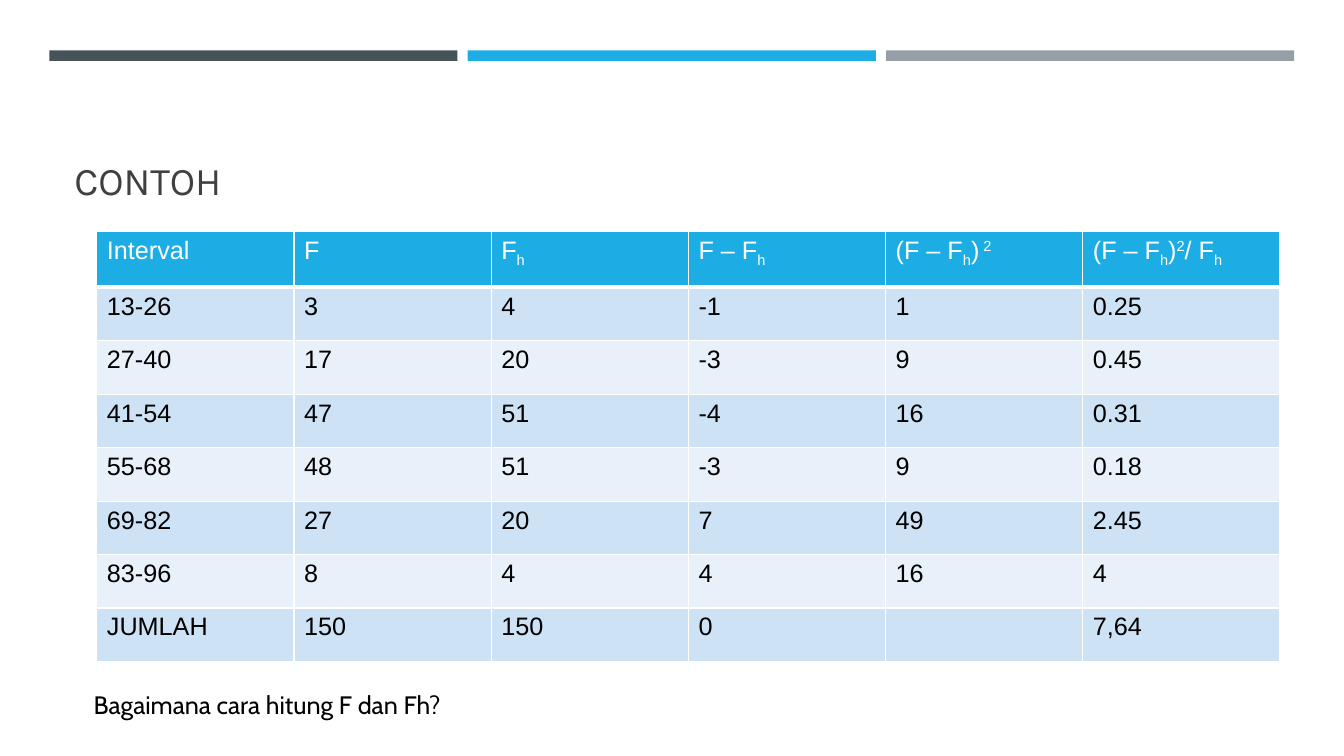
import pptx
import pptx.util
import pptx.dml.color
import pptx.enum.shapes
import pptx.enum.text
from lxml import etree

Pt = pptx.util.Pt
HUES = {
    "slate": "465359", "blue": "1CADE4", "gray": "969FA7",
    "title": "404040", "black": "000000", "white": "FFFFFF",
    "odd": "CDE3F5", "even": "E8F1FA",
}
SUB, SUP = -25000, 30000
HEAD = [
    ["Interval"],
    ["F"],
    ["F", ("h", SUB)],
    ["F – F", ("h", SUB)],
    ["(F – F", ("h", SUB), ")", (" 2", SUP)],
    ["(F – F", ("h", SUB), ")", ("2", SUP), "/ F", ("h", SUB)],
]
ROWS = [
    ["13-26", "3", "4", "-1", "1", "0.25"],
    ["27-40", "17", "20", "-3", "9", "0.45"],
    ["41-54", "47", "51", "-4", "16", "0.31"],
    ["55-68", "48", "51", "-3", "9", "0.18"],
    ["69-82", "27", "20", "7", "49", "2.45"],
    ["83-96", "8", "4", "4", "16", "4"],
    ["JUMLAH", "150", "150", "0", "", "7,64"],
]
TITLE = {"name": "Karla", "size": Pt(28), "hue": "title"}
NOTE = {"name": "Cabin", "size": Pt(18), "hue": "black"}
BODY = {"name": "Arial", "size": Pt(18), "bold": False, "hue": "black"}
TOP = {**BODY, "hue": "white"}


def color(key):
    return pptx.dml.color.RGBColor.from_string(HUES[key])


def style(font, form):
    for key, value in form.items():
        if key == "hue":
            font.color.rgb = color(value)
        else:
            setattr(font, key, value)


def write(frame, parts, form):
    """Fill the first paragraph; a (text, shift) part is raised or lowered."""
    para = frame.paragraphs[0]
    for part in parts:
        text, shift = (part, 0) if isinstance(part, str) else part
        run = para.add_run()
        run.text = text
        style(run.font, form)
        if shift:
            run._r.get_or_add_rPr().set("baseline", str(shift))


def label(slide, box, text, form, anchor):
    frame = slide.shapes.add_textbox(*map(Pt, box)).text_frame
    frame.word_wrap = True
    frame.vertical_anchor = anchor
    write(frame, [text], form)


def bars(slide, box, gap):
    left, top, width, height = box
    keys = ["slate", "blue", "gray"]
    span = (width - gap * (len(keys) - 1)) / len(keys)
    for i, key in enumerate(keys):
        bar = slide.shapes.add_shape(
            pptx.enum.shapes.MSO_SHAPE.RECTANGLE,
            Pt(left + i * (span + gap)), Pt(top), Pt(span), Pt(height))
        bar.shadow.inherit = False
        bar.fill.solid()
        bar.fill.fore_color.rgb = color(key)
        bar.line.fill.background()


def edge(cell, widths):
    """Draw white cell borders, placed ahead of the fill as the schema asks."""
    props = cell._tc.get_or_add_tcPr()
    tag = "{http://schemas.openxmlformats.org/drawingml/2006/main}"
    for i, (side, width) in enumerate(widths.items()):
        line = etree.Element(f"{tag}ln{side}", w=str(Pt(width)))
        fill = etree.SubElement(line, f"{tag}solidFill")
        etree.SubElement(fill, f"{tag}srgbClr", val=HUES["white"])
        props.insert(i, line)


def grid(slide, box, first):
    left, top, width, height = box
    count = len(ROWS) + 1
    table = slide.shapes.add_table(count, len(HEAD), *map(Pt, box)).table
    for col in table.columns:
        col.width = Pt(width / len(HEAD))
    for i, row in enumerate(table.rows):
        row.height = Pt((height - first) / len(ROWS) if i else first)
        for j, cell in enumerate(row.cells):
            cell.fill.solid()
            key = ("odd" if i % 2 else "even") if i else "blue"
            cell.fill.fore_color.rgb = color(key)
            if i == 0:
                write(cell.text_frame, HEAD[j], TOP)
                edge(cell, {"L": 1, "R": 1, "T": 1, "B": 3})
            elif ROWS[i - 1][j]:
                write(cell.text_frame, [ROWS[i - 1][j]], BODY)
            else:
                style(cell.text_frame.paragraphs[0].font, BODY)


def main():
    deck = pptx.Presentation()
    deck.slide_width, deck.slide_height = Pt(960), Pt(540)
    slide = deck.slides.add_slide(deck.slide_layouts[6])
    anchor = pptx.enum.text.MSO_ANCHOR
    bars(slide, (35.2, 36, 889.3, 7.5), 7.4)
    label(slide, (46, 55.4, 868.4, 93.6), "CONTOH", TITLE, anchor.BOTTOM)
    grid(slide, (69.2, 165.2, 845.2, 307.4), 40)
    label(slide, (59.8, 489, 854.6, 29), "Bagaimana cara hitung F dan Fh?",
          NOTE, anchor.TOP)
    deck.save("out.pptx")


if __name__ == "__main__":
    main()
